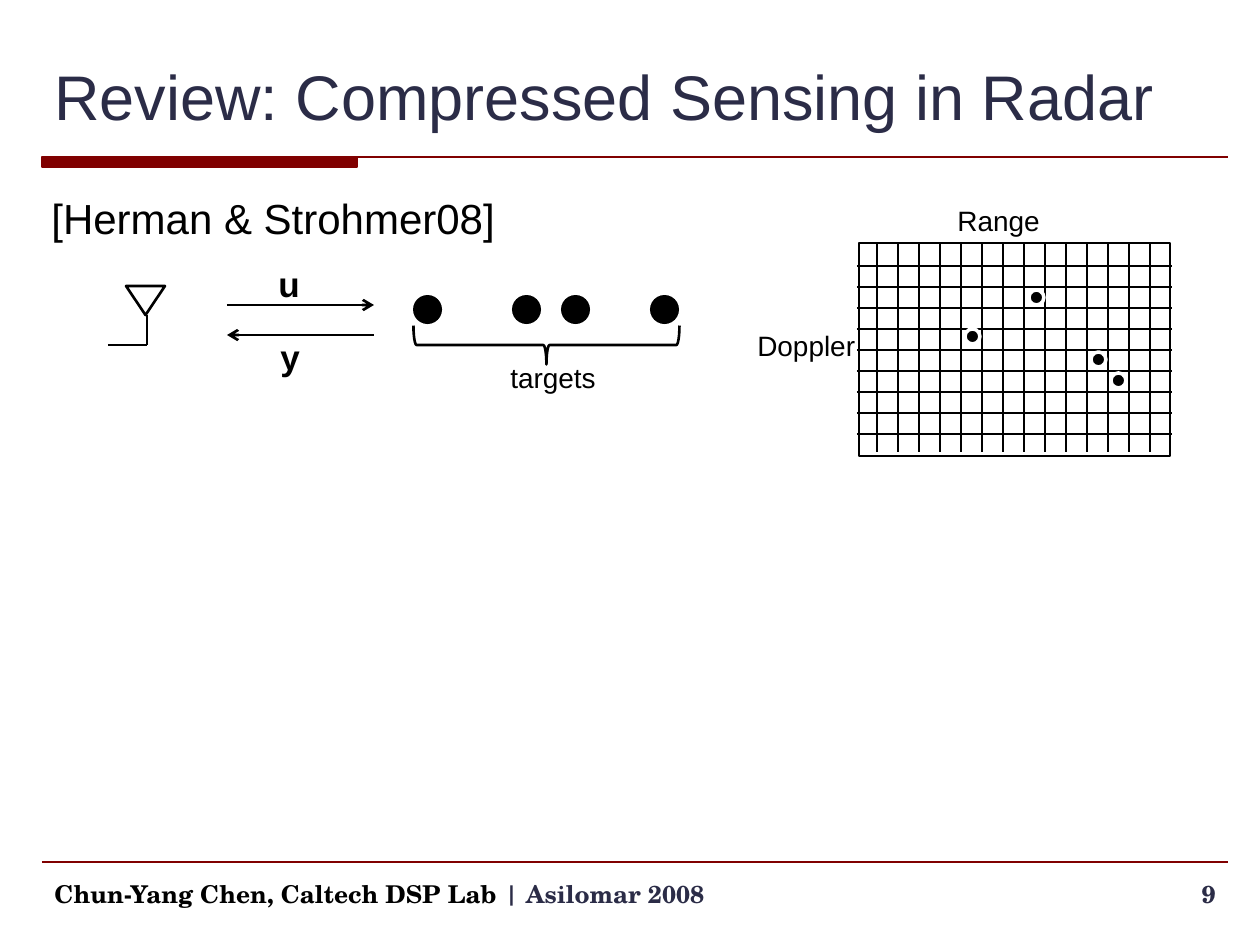
import pptx
import pptx.dml.color
import pptx.enum.shapes
import pptx.enum.text
import pptx.oxml
import pptx.oxml.ns
import pptx.util
from lxml import etree

BLACK = pptx.dml.color.RGBColor(0x00, 0x00, 0x00)
WHITE = pptx.dml.color.RGBColor(0xFF, 0xFF, 0xFF)
MAROON = pptx.dml.color.RGBColor(0x80, 0x00, 0x00)
NAVY = pptx.dml.color.RGBColor(0x2B, 0x2C, 0x47)

SANS = "Arial"
SERIF = "TeX Gyre Schola"
PX_PER_INCH = 126

SHAPES = pptx.enum.shapes.MSO_SHAPE
ALIGN = pptx.enum.text.PP_ALIGN
ANCHOR = pptx.enum.text.MSO_ANCHOR
AUTO_SIZE = pptx.enum.text.MSO_AUTO_SIZE


def px(length):
    return pptx.util.Emu(round(length * 914400 / PX_PER_INCH))


class Sketch:
    """Draws on one slide, with lengths in px."""

    def __init__(self, slide):
        self.shapes = slide.shapes

    def line(self, start, end, color=BLACK, width=1.5, arrow=False):
        connector = self.shapes.add_connector(
            pptx.enum.shapes.MSO_CONNECTOR.STRAIGHT, *map(px, start + end))
        connector.line.color.rgb = color
        connector.line.width = pptx.util.Pt(width)
        if arrow:
            outline = connector.line._get_or_add_ln()
            etree.SubElement(outline, pptx.oxml.ns.qn("a:tailEnd"), type="arrow")
        etree.SubElement(connector._element.spPr, pptx.oxml.ns.qn("a:effectLst"))

    def shape(self, kind, box, fill=None, outline=None, width=1.5, rotation=0):
        shape = self.shapes.add_shape(kind, *map(px, box))
        shape.shadow.inherit = False
        shape.rotation = rotation
        if fill is None:
            shape.fill.background()
        else:
            shape.fill.solid()
            shape.fill.fore_color.rgb = fill
        if outline is None:
            shape.line.fill.background()
        else:
            shape.line.color.rgb = outline
            shape.line.width = pptx.util.Pt(width)
        return shape

    def text(self, box, runs, size, font=SANS, bold=False, wrap=False,
             align=ALIGN.LEFT, anchor=ANCHOR.TOP):
        """Add one paragraph; runs are (text, color) pairs."""
        frame = self.shapes.add_textbox(*map(px, box)).text_frame
        frame.word_wrap = wrap
        frame.auto_size = AUTO_SIZE.NONE if wrap else AUTO_SIZE.SHAPE_TO_FIT_TEXT
        frame.vertical_anchor = anchor
        paragraph = frame.paragraphs[0]
        paragraph.alignment = align
        for words, color in runs:
            run = paragraph.add_run()
            run.text = words
            run.font.name = font
            run.font.size = pptx.util.Pt(size)
            run.font.bold = bold
            run.font.color.rgb = color


def draw_frame(sketch):
    sketch.line((42, 157), (1228, 157), MAROON)
    sketch.shape(SHAPES.RECTANGLE, (42, 157, 315, 10), MAROON, MAROON, 0.75)
    sketch.line((42, 862), (1228, 862), MAROON, 0.75)
    sketch.text((42, 32, 1187, 126), [("Review: Compressed Sensing in Radar", NAVY)],
                36, wrap=True, anchor=ANCHOR.MIDDLE)
    sketch.text((1096, 873, 132, 37), [("9", NAVY)], 14, SERIF, bold=True,
                wrap=True, align=ALIGN.RIGHT)
    sketch.text((42, 873, 965, 47),
                [("Chun-Yang Chen, Caltech DSP Lab", BLACK), (" | Asilomar 2008", NAVY)],
                14, SERIF, bold=True, wrap=True)


def draw_radar(sketch):
    sketch.text((39, 186, 474, 64), [("[Herman & Strohmer08]", BLACK)], 24)

    # Antenna
    sketch.line((108, 345), (147, 345))
    sketch.line((147, 345), (147, 315))
    sketch.shape(SHAPES.ISOSCELES_TRIANGLE, (126, 286, 39, 29), outline=BLACK, rotation=180)

    # Sent and received signals
    sketch.line((227, 305), (374, 305), arrow=True)
    sketch.line((374, 335), (227, 335), arrow=True)
    sketch.text((266, 256, 47, 55), [("u", BLACK)], 20, bold=True)
    sketch.text((268, 329, 45, 55), [("y", BLACK)], 20, bold=True)

    # Targets
    for left in (413, 512, 561, 650):
        sketch.shape(SHAPES.OVAL, (left, 295, 29, 29), BLACK)
    brace = sketch.shape(SHAPES.LEFT_BRACE, (527, 212, 39, 266), outline=BLACK, rotation=270)
    brace.adjustments[0] = 0.08
    sketch.text((498, 354, 112, 47), [("targets", BLACK)], 16)


def draw_range_doppler_grid(sketch):
    cell = 21
    for row in range(9):
        y = 266 + row * cell
        sketch.line((857, y), (1172, y), width=0.75)
    for column in range(14):
        x = 877 + column * cell
        sketch.line((x, 243), (x, 452), width=0.75)
    for left, top in ((1091, 352), (965, 329), (1029, 290), (1111, 373)):
        sketch.shape(SHAPES.OVAL, (left, top, 15, 15), BLACK, WHITE, 2)
    sketch.shape(SHAPES.RECTANGLE, (859, 243, 311, 213), outline=BLACK)
    sketch.text((945, 197, 108, 47), [("Range", BLACK)], 16)
    sketch.text((745, 322, 125, 47), [("Doppler", BLACK)], 16)


def main():
    presentation = pptx.Presentation()
    presentation.slide_width = px(1260)
    presentation.slide_height = px(945)
    slide = presentation.slides.add_slide(presentation.slide_layouts[6])
    sketch = Sketch(slide)
    draw_frame(sketch)
    draw_radar(sketch)
    draw_range_doppler_grid(sketch)
    presentation.save("out.pptx")


if __name__ == "__main__":
    main()
